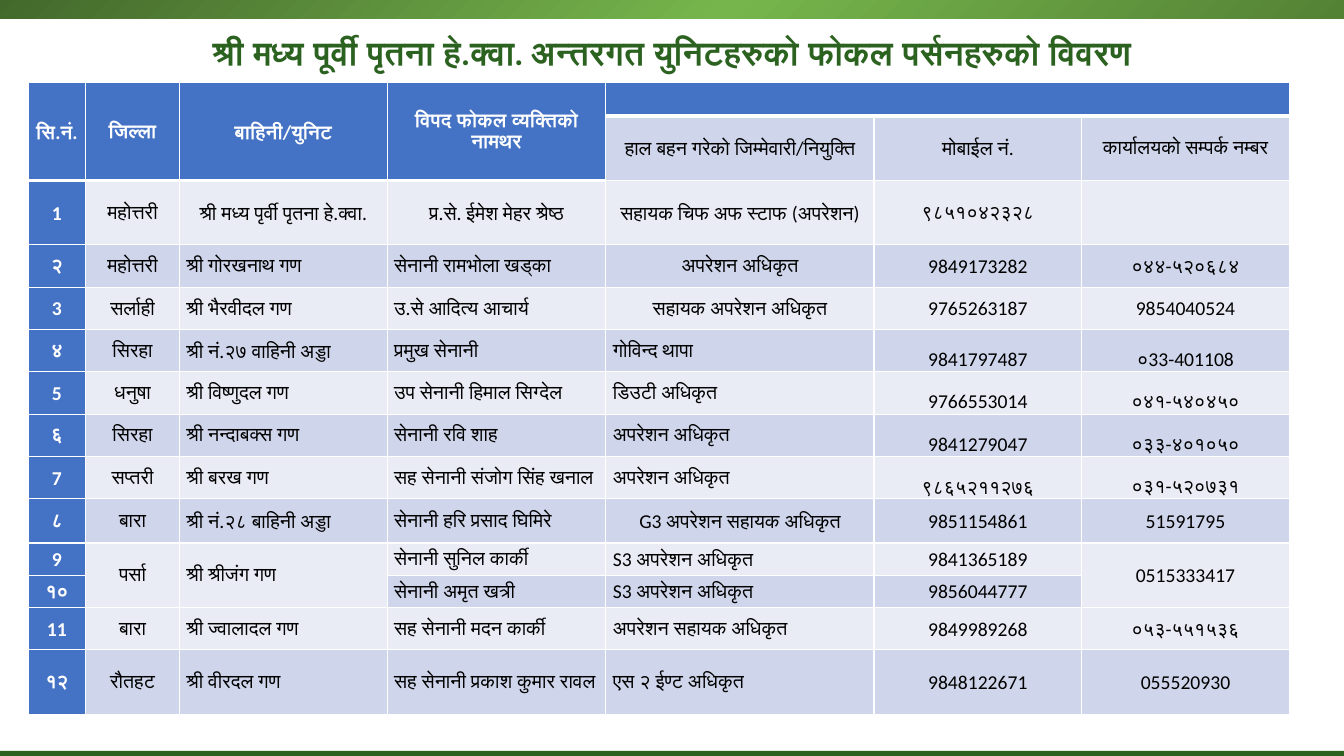
from lxml import etree
from pptx import Presentation
from pptx.dml.color import RGBColor
from pptx.enum.shapes import MSO_SHAPE
from pptx.enum.text import MSO_ANCHOR, PP_ALIGN
from pptx.oxml import parse_xml
from pptx.util import Inches, Pt

LEFT, CENTER = PP_ALIGN.LEFT, PP_ALIGN.CENTER
MIDDLE, BOTTOM = MSO_ANCHOR.MIDDLE, MSO_ANCHOR.BOTTOM
RECTANGLE = MSO_SHAPE.RECTANGLE
DRAWING_NS = "http://schemas.openxmlformats.org/drawingml/2006/main"

# Content: None marks a cell covered by a merge
TITLE = "श्री मध्य पूर्वी पृतना हे.क्वा. अन्तरगत युनिटहरुको फोकल पर्सनहरुको विवरण"
ROWS = [
    ("सि.नं.", "जिल्ला", "बाहिनी/युनिट", "विपद फोकल व्यक्तिको नामथर", "", None, None),
    (None, None, None, None, "हाल बहन गरेको जिम्मेवारी/नियुक्ति", "मोबाईल नं.",
     "कार्यालयको सम्पर्क नम्बर"),
    ("1", "महोत्तरी", "श्री मध्य पृर्वी पृतना हे.क्वा.", "प्र.से. ईमेश मेहर श्रेष्ठ",
     "सहायक चिफ अफ स्टाफ (अपरेशन)", "९८५१०४२३२८", ""),
    ("२", "महोत्तरी", "श्री गोरखनाथ गण", "सेनानी रामभोला खड्का",
     "अपरेशन अधिकृत", "9849173282", "०४४-५२०६८४"),
    ("3", "सर्लाही", "श्री भैरवीदल गण", "उ.से आदित्य आचार्य",
     "सहायक अपरेशन अधिकृत", "9765263187", "9854040524"),
    ("४", "सिरहा", "श्री नं.२७ वाहिनी अड्डा", "प्रमुख सेनानी",
     "गोविन्द थापा", "9841797487", "०33-401108"),
    ("5", "धनुषा", "श्री विष्णुदल गण", "उप सेनानी हिमाल सिग्देल",
     "डिउटी अधिकृत", "9766553014", "०४१-५४०४५०"),
    ("६", "सिरहा", "श्री नन्दाबक्स गण", "सेनानी रवि शाह",
     "अपरेशन अधिकृत", "9841279047", "०३३-४०१०५०"),
    ("7", "सप्तरी", "श्री बरख गण", "सह सेनानी संजोग सिंह खनाल",
     "अपरेशन अधिकृत", "९८६५२११२७६", "०३१-५२०७३१"),
    ("८", "बारा", "श्री नं.२८ बाहिनी अड्डा", "सेनानी हरि प्रसाद घिमिरे",
     "G3 अपरेशन सहायक अधिकृत", "9851154861", "51591795"),
    ("9", "पर्सा", "श्री श्रीजंग गण", "सेनानी सुनिल कार्की",
     "S3 अपरेशन अधिकृत", "9841365189", "0515333417"),
    ("१०", None, None, "सेनानी अमृत खत्री", "S3 अपरेशन अधिकृत", "9856044777", None),
    ("11", "बारा", "श्री ज्वालादल गण", "सह सेनानी मदन कार्की",
     "अपरेशन सहायक अधिकृत", "9849989268", "०५३-५५१५३६"),
    ("१२", "रौतहट", "श्री वीरदल गण", "सह सेनानी प्रकाश कुमार रावल",
     "एस २ ईण्ट अधिकृत", "9848122671", "055520930"),
]
COLUMN_WIDTHS = [0.57, 0.93, 2.06, 2.17, 2.66, 2.06, 2.06]
ROW_HEIGHTS = [0.33, 0.64, 0.64] + [0.42] * 6 + [0.44, 0.32, 0.32, 0.42, 0.64]
MERGES = [((0, col), (1, col)) for col in range(4)] + [((0, 4), (0, 6))]
MERGES += [((10, col), (11, col)) for col in (1, 2, 6)]

# Columns set left, each with the rows that stay centred
LEFT_COLUMNS = {2: {0, 2}, 3: {0, 2}, 4: {0, 1, 2, 3, 4, 9}}
LOW_PHONE_ROWS = range(5, 9)
GREEN, BLUE, WHITE, BLACK = "2C6220", "4472C4", "FFFFFF", "000000"
BANDS = ["E9EBF5", "CFD5EA"]
BAR_STOPS = [(0, "548235"), (46, "76B54C"), (100, "43682B")]


def rgb(hex_color):
    return RGBColor.from_string(hex_color)


def write(frame, text, size=14, color=BLACK, bold=False, align=CENTER, spacing=1.07):
    frame.text = text
    paragraph = frame.paragraphs[0]
    paragraph.alignment = align
    paragraph.line_spacing = spacing
    for run in paragraph.runs:
        run.font.name = "Calibri"
        run.font.size = Pt(size)
        run.font.bold = bold
        run.font.color.rgb = rgb(color)


def add_bar(slide, top, height):
    bar = slide.shapes.add_shape(RECTANGLE, Inches(-0.01), Inches(top),
                                 Inches(13.34), Inches(height))
    bar.shadow.inherit = False
    bar.fill.solid()
    bar.fill.fore_color.rgb = rgb(GREEN)
    bar.line.fill.background()
    return bar


def fill_radial(bar, stops):
    stop_xml = "".join(f'<a:gs pos="{pos * 1000}"><a:srgbClr val="{color}"/></a:gs>'
                       for pos, color in stops)
    gradient = parse_xml(
        f'<a:gradFill xmlns:a="{DRAWING_NS}" rotWithShape="1"><a:gsLst>{stop_xml}</a:gsLst>'
        '<a:path path="circle"><a:fillToRect l="100000" t="100000"/></a:path></a:gradFill>')
    properties = bar.element.spPr
    solid = properties.find(f"{{{DRAWING_NS}}}solidFill")
    properties.replace(solid, gradient)


def set_borders(cell, bottom):
    properties = cell._tc.get_or_add_tcPr()
    widths = [("lnL", 1), ("lnR", 1), ("lnT", 1), ("lnB", bottom)]
    for position, (side, width) in enumerate(widths):
        line = etree.Element(f"{{{DRAWING_NS}}}{side}", w=str(Pt(width)))
        fill = etree.SubElement(line, f"{{{DRAWING_NS}}}solidFill")
        etree.SubElement(fill, f"{{{DRAWING_NS}}}srgbClr", val=WHITE)
        properties.insert(position, line)


def format_cell(cell, row, col, text):
    header = row == 0 or (row == 1 and col < 4)
    heading = header or col == 0
    left = col in LEFT_COLUMNS and row not in LEFT_COLUMNS[col]
    cell.fill.solid()
    cell.fill.fore_color.rgb = rgb(BLUE if heading else BANDS[row % 2])
    cell.margin_left = cell.margin_right = Inches(0.07)
    cell.margin_top = cell.margin_bottom = 0
    cell.vertical_anchor = BOTTOM if col >= 5 and row in LOW_PHONE_ROWS else MIDDLE
    set_borders(cell, 3 if header else 1)
    if text:
        write(cell.text_frame, text, color=WHITE if heading else BLACK, bold=heading,
              align=LEFT if left else CENTER)


def main():
    deck = Presentation()
    deck.slide_width, deck.slide_height = Inches(13.33), Inches(7.5)
    slide = deck.slides.add_slide(deck.slide_layouts[5])

    # Green bars at the bottom and top edges
    add_bar(slide, 7.45, 0.05)
    fill_radial(add_bar(slide, -0.03, 0.21), BAR_STOPS)

    # Title, centred between the top bar and the table
    title = slide.shapes.title
    title.left, title.top = Inches(0.67), Inches(0.16)
    title.width, title.height = Inches(11.99), Inches(0.65)
    title.text_frame.vertical_anchor = MIDDLE
    title.text_frame.word_wrap = True
    write(title.text_frame, TITLE, size=24, color=GREEN, bold=True, spacing=1.15)

    # Table of focal persons
    contacts = slide.shapes.add_table(
        len(ROWS), len(COLUMN_WIDTHS), Inches(0.28), Inches(0.82),
        Inches(sum(COLUMN_WIDTHS)), Inches(sum(ROW_HEIGHTS))).table
    for column, width in zip(contacts.columns, COLUMN_WIDTHS):
        column.width = Inches(width)
    for table_row, height in zip(contacts.rows, ROW_HEIGHTS):
        table_row.height = Inches(height)
    for row, texts in enumerate(ROWS):
        for col, text in enumerate(texts):
            format_cell(contacts.cell(row, col), row, col, text)
    for first, last in MERGES:
        contacts.cell(*first).merge(contacts.cell(*last))

    deck.save("out.pptx")


if __name__ == "__main__":
    main()
